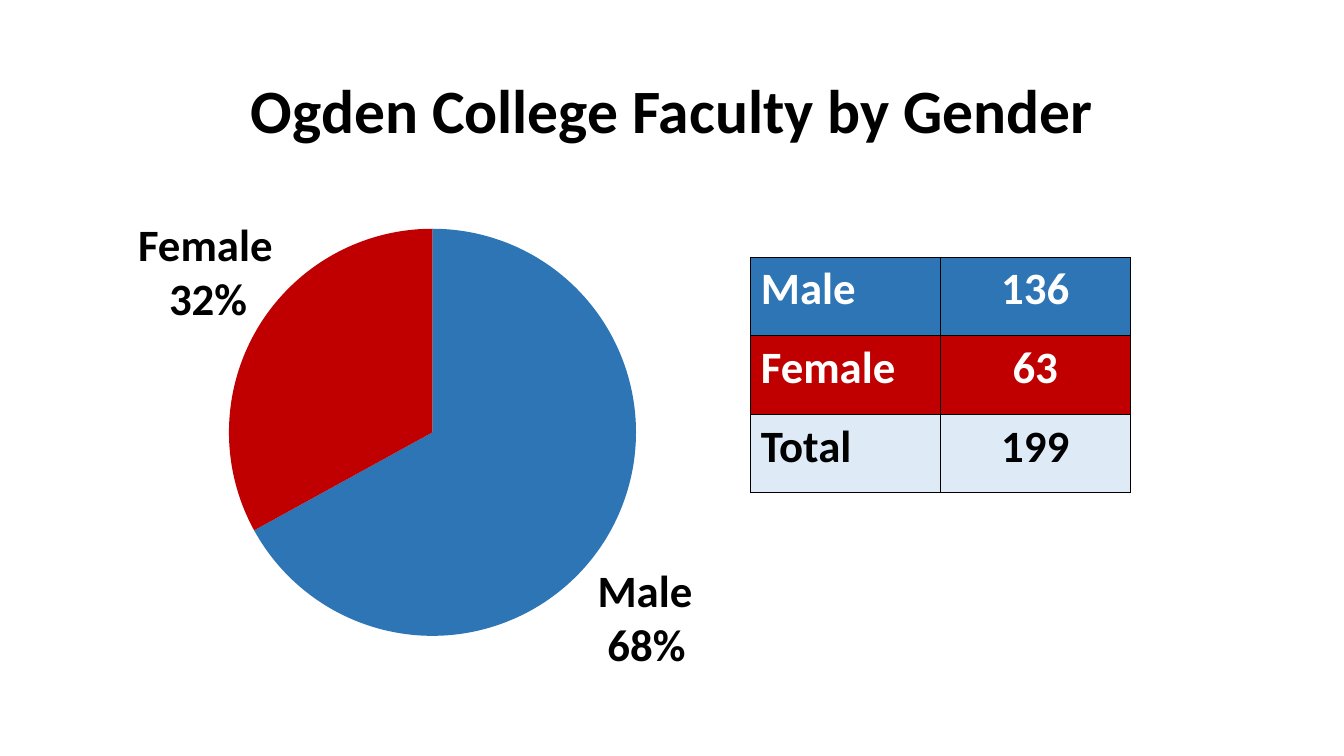
"""Build a slide with a pie chart and a table of faculty by gender."""
from lxml import etree
from pptx import Presentation
from pptx.chart.data import CategoryChartData
from pptx.dml.color import RGBColor
from pptx.enum.chart import XL_CHART_TYPE
from pptx.enum.text import MSO_ANCHOR, MSO_AUTO_SIZE, PP_ALIGN
from pptx.oxml import parse_xml
from pptx.oxml.ns import nsdecls, qn
from pptx.util import Cm, Pt

PIE = XL_CHART_TYPE.PIE
MID = MSO_ANCHOR.MIDDLE
GROW = MSO_AUTO_SIZE.SHAPE_TO_FIT_TEXT
LEFT, CENTER = PP_ALIGN.LEFT, PP_ALIGN.CENTER

THEME = {
    "font": "Calibri",
    "title": Pt(44),
    "body": Pt(32),
    "small": Pt(10),
    "line": Pt(1),
    "black": RGBColor.from_string("000000"),
    "white": RGBColor.from_string("FFFFFF"),
    "male": RGBColor.from_string("2E75B6"),
    "female": RGBColor.from_string("C00000"),
    "total": RGBColor.from_string("DEEBF7"),
}


def style(font, size, color="black", bold=True):
    values = {"name": THEME["font"], "size": THEME[size], "bold": bold}
    for key, value in values.items():
        setattr(font, key, value)
    font.color.rgb = THEME[color]


def write(para, text, size, color="black", align=LEFT):
    para.alignment = align
    run = para.add_run()
    run.text = text
    style(run.font, size, color)


deck = Presentation()
deck.slide_width, deck.slide_height = Cm(33.87), Cm(19.05)
slide = deck.slides.add_slide(deck.slide_layouts[5])
shapes = slide.shapes

title = shapes.title
place = {"left": Cm(2.34), "top": Cm(1.02), "width": Cm(29.21), "height": Cm(3.68)}
for key, value in place.items():
    setattr(title, key, value)
frame = title.text_frame
frame.vertical_anchor = MID
frame.paragraphs[0].line_spacing = 0.9
write(frame.paragraphs[0], "Ogden College Faculty by Gender", "title", align=CENTER)

data = CategoryChartData()
data.categories = ["1", "2"]
data.add_series("Series 1", (67, 33))
chart = shapes.add_chart(PIE, Cm(1.4), Cm(5.41), Cm(19), Cm(10.97), data).chart
chart.has_legend = False
chart.has_title = False
style(chart.font, "small", bold=False)
plot = chart.plots[0]
plot.vary_by_categories = True
for index, name in enumerate(("male", "female")):
    fmt = plot.series[0].points[index].format
    fmt.fill.solid()
    fmt.fill.fore_color.rgb = THEME[name]
    fmt.line.fill.background()

area = chart.element.chart.plotArea
for old in area.findall(qn("c:layout")):
    area.remove(old)
layout = etree.Element(qn("c:layout"))
manual = etree.SubElement(layout, qn("c:manualLayout"))
spots = {
    "layoutTarget": "inner", "xMode": "edge", "yMode": "edge",
    "x": "0.23", "y": "0.03", "w": "0.54", "h": "0.94",
}
for key, value in spots.items():
    etree.SubElement(manual, qn(f"c:{key}")).set("val", value)
area.insert(0, layout)

rows = [
    ("Male", "136", "male", "white"),
    ("Female", "63", "female", "white"),
    ("Total", "199", "total", "black"),
]
col, row = Cm(4.78), Cm(1.98)
table = shapes.add_table(3, 2, Cm(18.92), Cm(6.48), col * 2, row * 3).table
for r, (name, count, fill, color) in enumerate(rows):
    table.rows[r].height = row
    for c, (text, align) in enumerate(((name, LEFT), (count, CENTER))):
        table.columns[c].width = col
        cell = table.cell(r, c)
        write(cell.text_frame.paragraphs[0], text, "body", color, align)
        props = cell._tc.get_or_add_tcPr()
        for side in ("lnL", "lnR", "lnT", "lnB"):
            props.append(parse_xml(
                f'<a:{side} {nsdecls("a")} w="{THEME["line"]}"><a:solidFill>'
                f'<a:srgbClr val="{THEME["black"]}"/></a:solidFill></a:{side}>'
            ))
        cell.fill.solid()
        cell.fill.fore_color.rgb = THEME[fill]

labels = [
    ("Female", "32%", 3.23, 5.33, 4.19, 0.78, False),
    ("Male", "68%", 14.81, 14.05, 4.24, 0.25, True),
]
for name, share, left, top, width, indent, wrap in labels:
    box = shapes.add_textbox(Cm(left), Cm(top), Cm(width), Cm(3))
    frame = box.text_frame
    frame.word_wrap = wrap
    frame.auto_size = GROW
    write(frame.paragraphs[0], name, "body")
    para = frame.add_paragraph()
    write(para, share, "body")
    para._p.get_or_add_pPr().set("marL", str(Cm(indent)))

deck.save("out.pptx")
